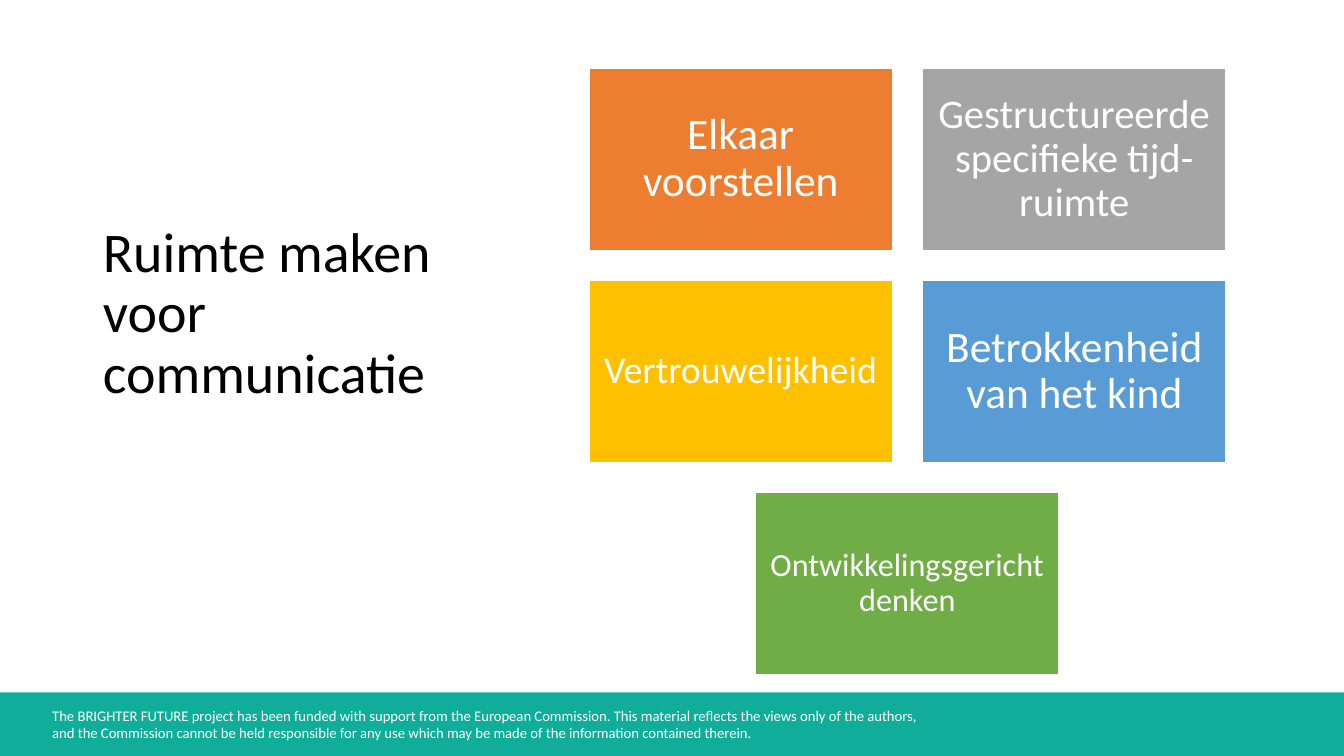
from pptx import Presentation
from pptx.dml.color import RGBColor
from pptx.enum import shapes, text
from pptx.util import Inches, Pt

WHITE = RGBColor(0xFF, 0xFF, 0xFF)
BLACK = RGBColor(0x00, 0x00, 0x00)
TEAL = RGBColor(0x10, 0xAD, 0x9A)
ORANGE = RGBColor(0xED, 0x7D, 0x31)
GREY = RGBColor(0xA5, 0xA5, 0xA5)
YELLOW = RGBColor(0xFF, 0xC0, 0x00)
BLUE = RGBColor(0x59, 0x9B, 0xD5)
GREEN = RGBColor(0x70, 0xAD, 0x47)

FONT = "Calibri"
SLIDE_WIDTH, SLIDE_HEIGHT = 13.33, 7.5
FOOTER_TOP = 6.87
FOOTER_TEXT = (
    "The BRIGHTER FUTURE project has been funded with support from the European Commission. "
    "This material reflects the views only of the authors,\v"
    "and the Commission cannot be held responsible for any use which may be made of "
    "the information contained therein."
)
CARD_ROWS = [
    [("Elkaar voorstellen", 31, ORANGE), ("Gestructureerde specifieke tijd-ruimte", 29, GREY)],
    [("Vertrouwelijkheid", 27, YELLOW), ("Betrokkenheid van het kind", 31, BLUE)],
    [("Ontwikkelingsgericht denken", 23, GREEN)],
]


def place(shape, left, top, width, height):
    shape.left, shape.top = Inches(left), Inches(top)
    shape.width, shape.height = Inches(width), Inches(height)


def write(shape, wording, size, color, anchor, alignment, spacing=None, margins=(0.1, 0.05)):
    frame = shape.text_frame
    frame.text = wording
    frame.word_wrap = True
    frame.auto_size = text.MSO_AUTO_SIZE.NONE
    frame.vertical_anchor = anchor
    frame.margin_left = frame.margin_right = Inches(margins[0])
    frame.margin_top = frame.margin_bottom = Inches(margins[1])
    paragraph = frame.paragraphs[0]
    paragraph.alignment = alignment
    paragraph.line_spacing = spacing
    paragraph.font.name = FONT
    paragraph.font.size = Pt(size)
    paragraph.font.color.rgb = color


def add_rectangle(slide, left, top, width, height, fill):
    rectangle = slide.shapes.add_shape(
        shapes.MSO_SHAPE.RECTANGLE, Inches(left), Inches(top), Inches(width), Inches(height)
    )
    rectangle.shadow.inherit = False
    rectangle.fill.solid()
    rectangle.fill.fore_color.rgb = fill
    return rectangle


def add_footer(slide, left, top, width, height):
    band = add_rectangle(slide, left, top, width, height, TEAL)
    band.line.fill.background()
    notice = slide.shapes.add_textbox(
        Inches(left + 0.42), Inches(top + 0.09), Inches(10), Inches(0.45)
    )
    write(notice, FOOTER_TEXT, 10.5, WHITE, text.MSO_ANCHOR.TOP, text.PP_ALIGN.LEFT)


def set_title(slide, left, top, width, height):
    title = slide.shapes.title
    place(title, left, top, width, height)
    write(title, "Ruimte maken voor communicatie", 40, BLACK,
          text.MSO_ANCHOR.MIDDLE, text.PP_ALIGN.LEFT, 0.9)


def add_cards(slide, left, top, width, height, gap=0.3):
    card_width = (width - gap) / 2
    card_height = (height - gap * (len(CARD_ROWS) - 1)) / len(CARD_ROWS)
    for row_index, row in enumerate(CARD_ROWS):
        row_width = len(row) * (card_width + gap) - gap
        row_left = left + (width - row_width) / 2
        row_top = top + row_index * (card_height + gap)
        for column, (wording, size, fill) in enumerate(row):
            card_left = row_left + column * (card_width + gap)
            card = add_rectangle(slide, card_left, row_top, card_width, card_height, fill)
            card.line.color.rgb = WHITE
            card.line.width = Pt(1)
            write(card, wording, size, WHITE, text.MSO_ANCHOR.MIDDLE,
                  text.PP_ALIGN.CENTER, 0.9, (0.13, 0.13))


def main():
    presentation = Presentation()
    presentation.slide_width = Inches(SLIDE_WIDTH)
    presentation.slide_height = Inches(SLIDE_HEIGHT)
    slide = presentation.slides.add_slide(presentation.slide_layouts[5])
    add_footer(slide, 0, FOOTER_TOP, SLIDE_WIDTH, SLIDE_HEIGHT - FOOTER_TOP)
    set_title(slide, 0.92, 0.61, 3.93, 5.02)
    add_cards(slide, 5.84, 0.68, 6.32, 6.01)
    presentation.save("out.pptx")


if __name__ == "__main__":
    main()
